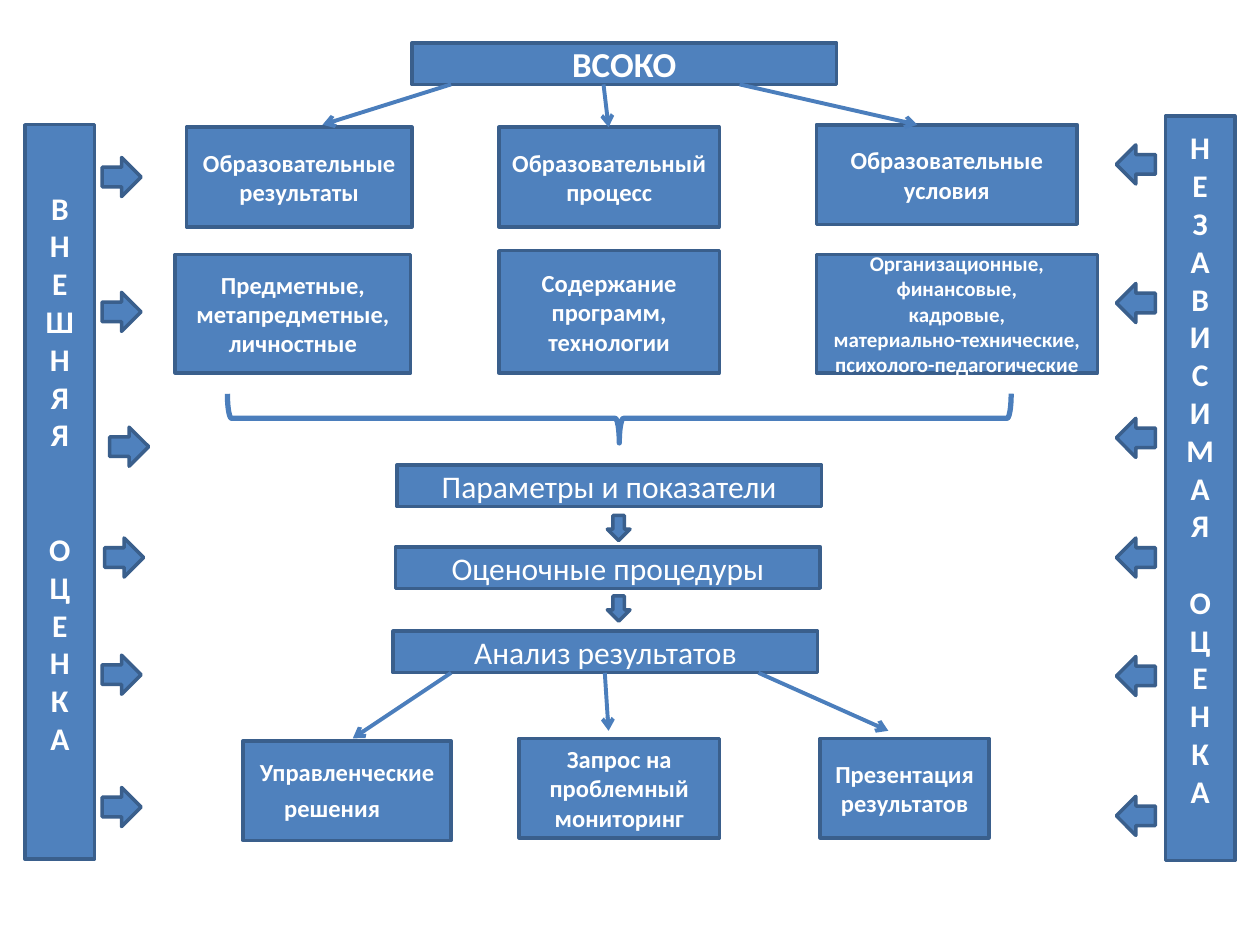
from typing import NamedTuple

import pptx
import pptx.dml.color
import pptx.enum.shapes
import pptx.enum.text
import pptx.oxml
import pptx.oxml.ns
import pptx.util
from pptx.util import Inches

SHAPES = pptx.enum.shapes.MSO_SHAPE
FILL, OUTLINE, CONNECTOR, WHITE = "4F81BD", "3A5F8C", "4B7EBC", "FFFFFF"
FONT = "Calibri"
LETTER_LINE = 22  # height in points of one 18 pt line


class Box(NamedTuple):
    left: float
    top: float
    width: float
    height: float
    lines: tuple[str, ...]
    size: int = 14
    bold: bool = True


class Column(NamedTuple):
    box: Box
    words: tuple[str, str]
    word_gap: int  # in lines


class Line(NamedTuple):
    start: tuple[float, float]
    end: tuple[float, float]


TITLE = Box(3.27, 0.34, 3.37, 0.33, ("ВСОКО",), 20)
BOXES = (
    Box(1.48, 1.01, 1.79, 0.79, ("Образовательные результаты",)),
    Box(3.96, 1.01, 1.75, 0.79, ("Образовательный процесс",)),
    Box(6.48, 0.99, 2.07, 0.79, ("Образовательные условия",)),
    Box(1.39, 2.02, 1.87, 0.94, ("Предметные, метапредметные, личностные",)),
    Box(3.96, 1.99, 1.75, 0.97, ("Содержание программ,", "технологии")),
    Box(6.48, 2.02, 2.23, 0.94, (
        "Организационные,", "финансовые,", "кадровые,",
        "материально-технические,", "психолого-педагогические"), 12),
    Box(3.15, 3.69, 3.37, 0.33, ("Параметры и показатели",), 18, False),
    Box(3.14, 4.34, 3.37, 0.33, ("Оценочные процедуры",), 18, False),
    Box(3.12, 5.01, 3.37, 0.33, ("Анализ результатов",), 18, False),
    Box(4.12, 5.86, 1.59, 0.79, ("Запрос на проблемный мониторинг",)),
    Box(6.51, 5.86, 1.34, 0.79, ("Презентация результатов",)),
)
DECISIONS = Box(1.93, 5.88, 1.65, 0.79, ("Управленческие решения",))
COLUMNS = (
    Column(Box(0.2, 0.99, 0.55, 5.83, (), 18), ("ВНЕШНЯЯ", "ОЦЕНКА"), 2),
    Column(Box(9.25, 0.92, 0.55, 5.91, (), 18), ("НЕЗАВИСИМАЯ", "ОЦЕНКА"), 1),
)
LINES = (
    Line((3.58, 0.67), (2.56, 0.99)),
    Line((4.79, 0.67), (4.83, 1.01)),
    Line((5.87, 0.67), (7.28, 0.99)),
    Line((3.58, 5.34), (2.8, 5.86)),
    Line((4.8, 5.34), (4.83, 5.8)),
    Line((6.02, 5.34), (7.05, 5.8)),
)
RIGHT_ARROWS = ((0.81, 1.25), (0.81, 2.32), (0.87, 3.39),
                (0.83, 4.27), (0.81, 5.2), (0.81, 6.25))
LEFT_ARROW_TOPS = (1.15, 2.25, 3.32, 4.27, 5.21, 6.32)
DOWN_ARROW_TOPS = (4.09, 4.73)


def color(value: str) -> pptx.dml.color.RGBColor:
    return pptx.dml.color.RGBColor.from_string(value)


def style_shape(shape) -> None:
    shape.fill.solid()
    shape.fill.fore_color.rgb = color(FILL)
    shape.line.color.rgb = color(OUTLINE)
    shape.line.width = pptx.util.Pt(2)


def add_solid(slide, kind, left: float, top: float, width: float, height: float):
    shape = slide.shapes.add_shape(
        kind, Inches(left), Inches(top), Inches(width), Inches(height))
    shape.shadow.inherit = False
    style_shape(shape)
    return shape


def add_run(paragraph, text: str, size: int, bold: bool) -> None:
    run = paragraph.add_run()
    run.text = text
    run.font.name = FONT
    run.font.size = pptx.util.Pt(size)
    run.font.bold = bold
    run.font.color.rgb = color(WHITE)


def write_lines(shape, lines, size: int, bold: bool) -> list:
    """Write centred paragraphs and return them."""
    frame = shape.text_frame
    frame.word_wrap = True
    frame.auto_size = pptx.enum.text.MSO_AUTO_SIZE.NONE
    frame.vertical_anchor = pptx.enum.text.MSO_ANCHOR.MIDDLE
    paragraphs = []
    for text in lines:
        paragraph = frame.add_paragraph() if paragraphs else frame.paragraphs[0]
        paragraph.alignment = pptx.enum.text.PP_ALIGN.CENTER
        add_run(paragraph, text, size, bold)
        paragraphs.append(paragraph)
    return paragraphs


def add_box(slide, box: Box) -> list:
    shape = add_solid(slide, SHAPES.RECTANGLE, *box[:4])
    return write_lines(shape, box.lines, box.size, box.bold)


def add_column(slide, column: Column) -> None:
    """Stack the letters of two words, set one line above the middle of the bar."""
    shape = add_solid(slide, SHAPES.RECTANGLE, *column.box[:4])
    first, second = column.words
    letters = write_lines(shape, first + second, column.box.size, column.box.bold)
    letters[len(first)].space_before = pptx.util.Pt(LETTER_LINE * column.word_gap)
    shape.text_frame.margin_bottom = Inches(0.05) + pptx.util.Pt(LETTER_LINE)


def add_arrow_line(slide, line: Line) -> None:
    connector = slide.shapes.add_connector(
        pptx.enum.shapes.MSO_CONNECTOR.STRAIGHT,
        *(Inches(value) for value in line.start + line.end))
    connector.line.color.rgb = color(CONNECTOR)
    connector.line.width = pptx.util.Pt(2.25)
    outline = connector.line._get_or_add_ln()
    head = pptx.oxml.parse_xml(
        f'<a:tailEnd {pptx.oxml.ns.nsdecls("a")} type="arrow"/>')
    outline.append(head)
    effects = pptx.oxml.parse_xml(f'<a:effectLst {pptx.oxml.ns.nsdecls("a")}/>')
    connector._element.spPr.append(effects)


def add_brace(slide) -> None:
    brace = add_solid(slide, SHAPES.LEFT_BRACE, 4.72, 0.21, 0.39, 6.22)
    brace.rotation = 270
    brace.fill.background()
    brace.line.color.rgb = color(CONNECTOR)
    brace.line.width = pptx.util.Pt(3)


def add_title(slide) -> None:
    title = slide.shapes.title
    title.left, title.top, title.width, title.height = map(Inches, TITLE[:4])
    style_shape(title)
    write_lines(title, TITLE.lines, TITLE.size, TITLE.bold)


def main() -> None:
    presentation = pptx.Presentation()
    presentation.slide_width = Inches(10)
    presentation.slide_height = Inches(7.5)
    slide = presentation.slides.add_slide(presentation.slide_layouts[5])

    add_title(slide)
    for box in BOXES:
        add_box(slide, box)
    decisions = add_box(slide, DECISIONS)
    add_run(decisions[0], "\t", 18, True)
    add_brace(slide)
    for column in COLUMNS:
        add_column(slide, column)
    for line in LINES:
        add_arrow_line(slide, line)
    for top in DOWN_ARROW_TOPS:
        add_solid(slide, SHAPES.DOWN_ARROW, 4.82, top, 0.18, 0.2)
    for left, top in RIGHT_ARROWS:
        add_solid(slide, SHAPES.RIGHT_ARROW, left, top, 0.31, 0.31)
    for top in LEFT_ARROW_TOPS:
        add_solid(slide, SHAPES.LEFT_ARROW, 8.86, top, 0.31, 0.31)

    presentation.save("out.pptx")


if __name__ == "__main__":
    main()
